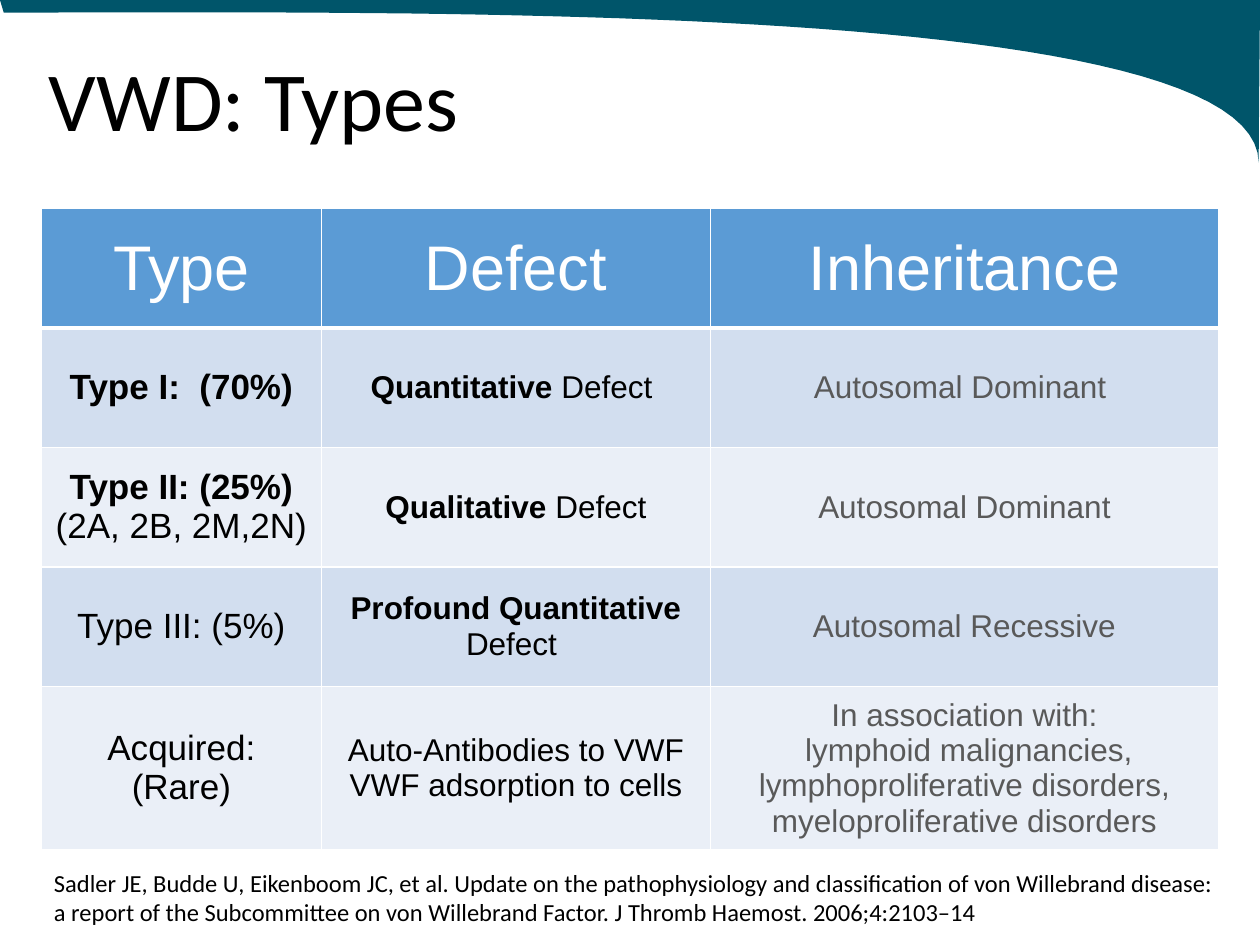
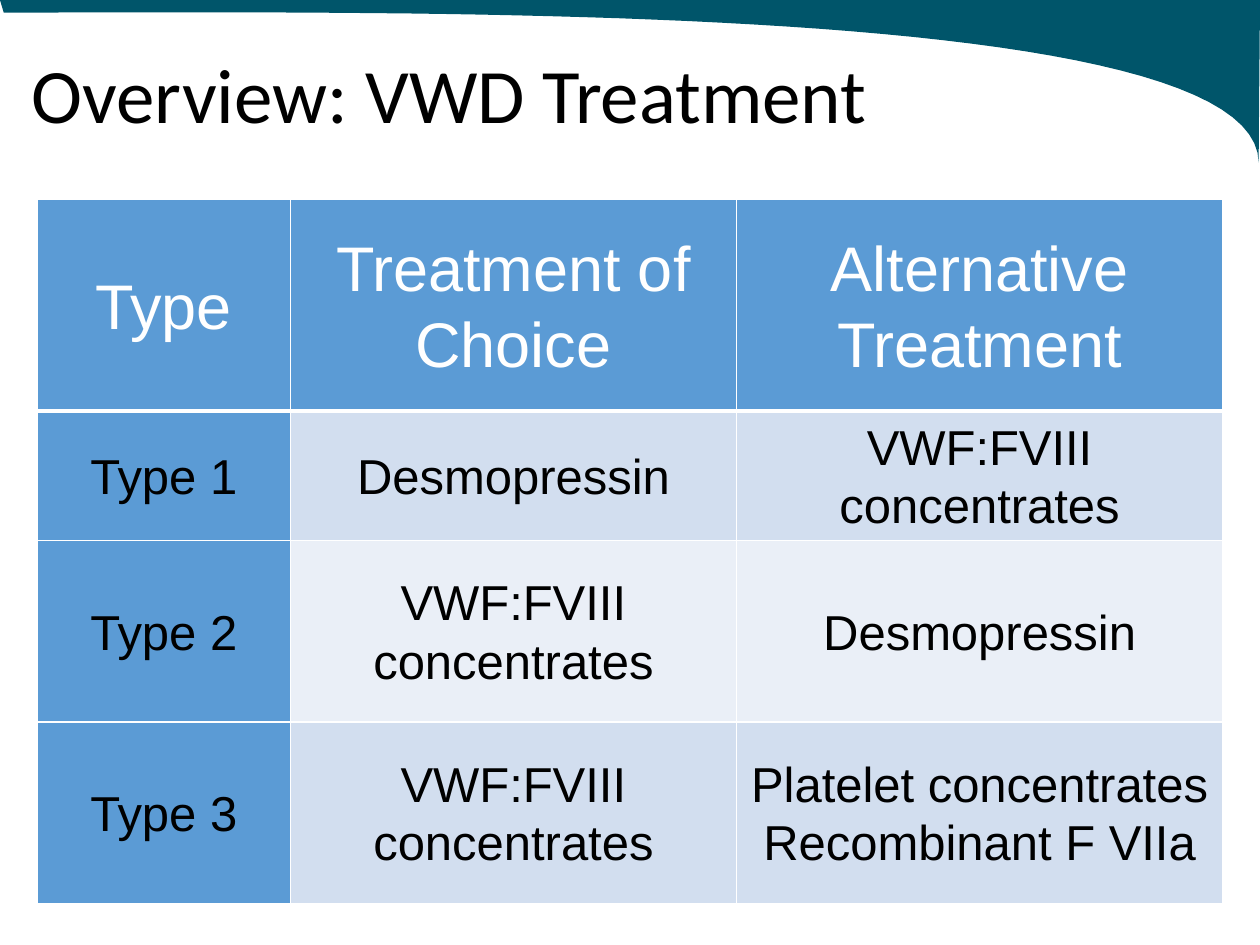
from dataclasses import dataclass
from lxml.etree import SubElement
from pptx import Presentation
from pptx.dml.color import RGBColor
from pptx.enum.text import MSO_ANCHOR, MSO_AUTO_SIZE, PP_ALIGN
from pptx.oxml.ns import qn
from pptx.util import Inches, Pt

WIDTH, HEIGHT = Inches(10), Inches(7.5)


@dataclass(frozen=True)
class Theme:
    teal: str = "00556A"
    header: str = "5B9BD5"
    odd_row: str = "D2DEEF"
    even_row: str = "EAEFF7"
    white: str = "FFFFFF"
    black: str = "000000"
    muted: str = "595959"
    title_font: str = "Calibri"
    table_font: str = "Arial"
    title_size: int = 48
    long_title_size: int = 44
    header_size: int = 36
    large_size: int = 28
    label_size: int = 20
    detail_size: int = 18
    citation_size: int = 14
    rule: int = 1
    header_rule: int = 3


T = Theme()


def across(percent):
    return round(WIDTH * percent / 100)


def down(percent):
    return round(HEIGHT * percent / 100)


def box(left, top, width, height):
    return across(left), down(top), across(width), down(height)


def rgb(colour):
    return RGBColor.from_string(colour)


def style_run(r, font, size, colour, bold=False):
    r.font.name = font
    r.font.size = Pt(size)
    r.font.color.rgb = rgb(colour)
    r.font.bold = bold


def curve_points(start, control1, control2, end, steps=48):
    points = []
    for i in range(1, steps + 1):
        t = i / steps
        weights = ((1 - t) ** 3, 3 * t * (1 - t) ** 2, 3 * t * t * (1 - t), t ** 3)
        points.append(tuple(
            sum(w * value for w, value in zip(weights, values))
            for values in zip(start, control1, control2, end)))
    return points


def add_band(s):
    tip = (99.9, 17.2)
    outline = [(100, 0)]
    outline += curve_points((100, 0), (100, 1.87), (99.9, 15.33), tip)
    outline += curve_points(tip, (99.8, 0), (33.6, 1.33), (0.3, 1.33))
    builder = s.shapes.build_freeform(0, 0, scale=1.0)
    builder.add_line_segments([(across(x), down(y)) for x, y in outline], close=True)
    sp = builder.convert_to_shape()
    sp.shadow.inherit = False
    sp.fill.solid()
    sp.fill.fore_color.rgb = rgb(T.teal)
    sp.line.fill.background()


def add_text(s, text, area, size, anchor=MSO_ANCHOR.TOP, spacing=None):
    sp = s.shapes.add_textbox(*box(*area))
    tf = sp.text_frame
    tf.word_wrap = True
    tf.vertical_anchor = anchor
    tf.text = text
    p = tf.paragraphs[0]
    p.line_spacing = spacing
    style_run(p.runs[0], T.title_font, size, T.black)
    return sp


def add_slide(prs, title, area, size):
    s = prs.slides.add_slide(prs.slide_layouts[6])
    add_band(s)
    add_text(s, title, area, size, MSO_ANCHOR.MIDDLE, 0.9)
    return s


def add_citation(s, text, area):
    sp = add_text(s, text, area, T.citation_size)
    sp.text_frame.auto_size = MSO_AUTO_SIZE.SHAPE_TO_FIT_TEXT


def set_borders(cell, top, bottom):
    tc_pr = cell._tc.get_or_add_tcPr()
    widths = {"a:lnL": T.rule, "a:lnR": T.rule, "a:lnT": top, "a:lnB": bottom}
    for i, (tag, width) in enumerate(widths.items()):
        line = SubElement(tc_pr, qn(tag), w=str(Pt(width)))
        fill = SubElement(line, qn("a:solidFill"))
        SubElement(fill, qn("a:srgbClr"), val=T.white)
        tc_pr.insert(i, line)


def write_cell(cell, text, size, colour, spacing):
    tf = cell.text_frame
    cell.vertical_anchor = MSO_ANCHOR.MIDDLE
    for i, line in enumerate(text.split("\n")):
        p = tf.add_paragraph() if i else tf.paragraphs[0]
        p.alignment = PP_ALIGN.CENTER
        p.line_spacing = spacing
        for j, part in enumerate(line.split("*")):
            if part:
                r = p.add_run()
                r.text = part
                style_run(r, T.table_font, size, colour, j % 2 == 1)


def add_grid(s, left, top, columns, rows, content, styles,
             spacing=None, tight=False, label_fill=None):
    area = box(left, top, sum(columns), sum(rows))
    table = s.shapes.add_table(len(rows), len(columns), *area).table
    table.horz_banding = False
    for column, width in zip(table.columns, columns):
        column.width = across(width)
    for row, height in zip(table.rows, rows):
        row.height = down(height)
    for i, texts in enumerate(content):
        for j, text in enumerate(texts):
            cell = table.cell(i, j)
            size, colour = styles[j] if i else (T.header_size, T.white)
            fill = (T.odd_row if i % 2 else T.even_row) if i else T.header
            if j == 0 and label_fill:
                fill = label_fill
            if tight:
                cell.margin_left = cell.margin_right = Inches(0.07)
                cell.margin_top = cell.margin_bottom = 0
            write_cell(cell, text, size, colour, spacing)
            cell.fill.solid()
            cell.fill.fore_color.rgb = rgb(fill)
            set_borders(cell,
                        T.header_rule if i == 1 else T.rule,
                        T.header_rule if i == 0 else T.rule)


def add_types_slide(prs):
    s = add_slide(prs, "VWD: Types", (2.9, 3.07, 90.9, 16), T.title_size)
    content = [
        ("Type", "Defect", "Inheritance"),
        ("*Type I:  (70%)*", "*Quantitative* Defect ", "Autosomal Dominant "),
        ("*Type II: (25%)*\n(2A, 2B, 2M,2N)", "*Qualitative *Defect", "Autosomal Dominant"),
        ("Type III: (5%)", "*Profound Quantitative*\nDefect ", "Autosomal Recessive"),
        ("Acquired: (Rare)", "Auto-Antibodies to VWF VWF adsorption to cells",
         "In association with:\n lymphoid malignancies, lymphoproliferative disorders, "
         "myeloproliferative disorders"),
    ]
    styles = [(T.label_size, T.black), (T.detail_size, T.black), (T.detail_size, T.muted)]
    add_grid(s, 3.3, 22.08, [22.2, 30.9, 40.3], [12.64] * 4 + [16.27], content, styles)
    add_citation(
        s,
        "Sadler JE, Budde U, Eikenboom JC, et al. Update on the pathophysiology and "
        "classification of von Willebrand disease: a report of the Subcommittee on "
        "von Willebrand Factor. J Thromb Haemost. 2006;4:2103–14",
        (3.3, 91.2, 94.2, 7.6))


def add_treatment_slide(prs):
    s = add_slide(prs, "Overview: VWD Treatment", (1.5, 3.33, 91.9, 14.13), T.long_title_size)
    concentrates = "VWF:FVIII concentrates"
    content = [
        ("Type", "Treatment of Choice", "Alternative Treatment"),
        ("Type 1", "Desmopressin", concentrates),
        ("Type 2", concentrates, "Desmopressin"),
        ("Type 3", concentrates, "Platelet concentrates\nRecombinant F VIIa"),
    ]
    add_grid(s, 2.95, 21.1, [20.1, 35.4, 38.6], [22.4, 13.7, 19.2, 19.2], content,
             [(T.large_size, T.black)] * 3, spacing=1.07, tight=True, label_fill=T.header)


def main():
    prs = Presentation()
    prs.slide_width, prs.slide_height = WIDTH, HEIGHT
    add_types_slide(prs)
    add_treatment_slide(prs)
    prs.save("out.pptx")


if __name__ == "__main__":
    main()
